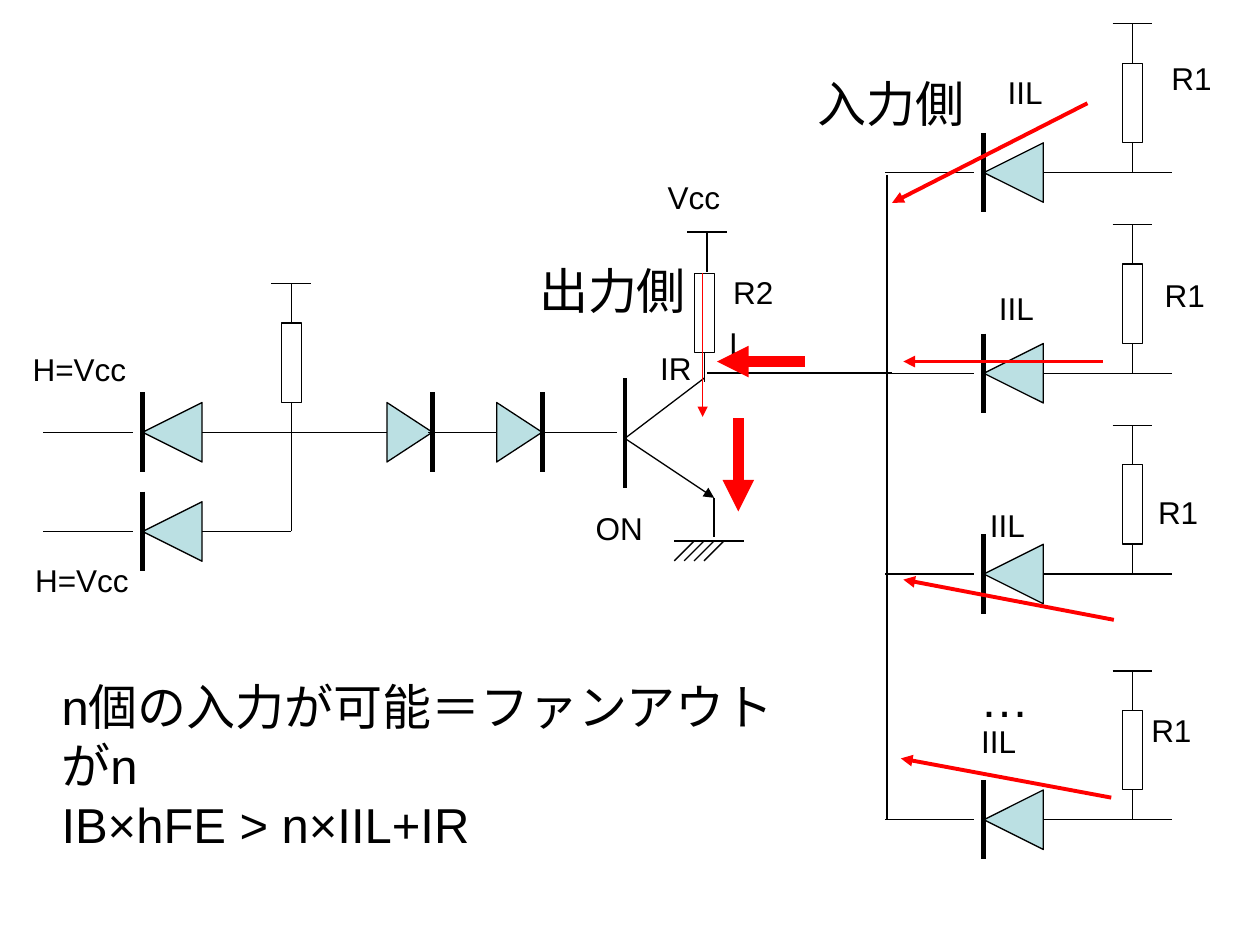
import lxml.etree
import pptx
import pptx.dml.color
import pptx.enum.shapes
import pptx.enum.text
import pptx.oxml.ns
import pptx.util

Pt = pptx.util.Pt
KIND = pptx.enum.shapes.MSO_SHAPE
BLACK, RED, AQUA = "000000", "FF0000", "BBE0E3"


def hue(code):
    return pptx.dml.color.RGBColor.from_string(code)


def put(item, vals):
    for name, val in vals.items():
        setattr(item, name, val)


def wire(pool, x1, y1, x2, y2, width=0.75, color=BLACK, arrow=False):
    line = pool.add_connector(pptx.enum.shapes.MSO_CONNECTOR.STRAIGHT,
                              Pt(x1), Pt(y1), Pt(x2), Pt(y2))
    line.line.color.rgb = hue(color)
    line.line.width = Pt(width)
    qn = pptx.oxml.ns.qn
    props = line._element.spPr
    if arrow:
        lxml.etree.SubElement(props.find(qn("a:ln")), qn("a:tailEnd"), type="triangle")
    lxml.etree.SubElement(props, qn("a:effectLst"))
    return line


def block(pool, kind, x, y, w, h, fill=None, turn=0):
    item = pool.add_shape(kind, Pt(x), Pt(y), Pt(w), Pt(h))
    item.shadow.inherit = False
    item.rotation = turn
    if fill:
        item.fill.solid()
        item.fill.fore_color.rgb = hue(fill)
    else:
        item.fill.background()
    item.line.color.rgb = hue(BLACK)
    item.line.width = Pt(0.75)
    return item


def label(pool, words, x, y, w, h=28.8, size=18, wrap=False):
    frame = pool.add_textbox(Pt(x), Pt(y), Pt(w), Pt(h)).text_frame
    put(frame, {"word_wrap": wrap, "text": words,
                "auto_size": pptx.enum.text.MSO_AUTO_SIZE.SHAPE_TO_FIT_TEXT})
    for para in frame.paragraphs:
        put(para.runs[0].font, {"name": "Arial", "size": Pt(size)})
        para.runs[0].font.color.rgb = hue(BLACK)


def resist(pool, x, y):
    """Resistor centred on x with its top at y."""
    return block(pool, KIND.RECTANGLE, x - 5.67, y, 11.34, 45.36)


def pullup(pool, x, y):
    """Supply bar and resistor ending at the junction (x, y)."""
    body = resist(pool, x, y - 62.4)
    wire(pool, x, y - 17, x, y).begin_connect(body, 2)
    wire(pool, x - 11.34, y - 85, x + 11.34, y - 85)
    wire(pool, x, y - 85, x, y - 62.4).end_connect(body, 0)
    wire(pool, x, y, x + 22.7, y)


def gate(pool, x, y):
    """Diode pointing left, its right lead ending at (x, y)."""
    part = pool.add_group_shape().shapes
    block(part, KIND.ISOSCELES_TRIANGLE, x - 85, y - 17, 34, 34, AQUA, 270)
    wire(part, x - 85, y - 22.7, x - 85, y + 22.7, 3)
    wire(part, x, y, x - 51, y)
    wire(part, x - 90.7, y, x - 141.7, y)


def series(pool, x, y):
    """Diode pointing right, with its bar at (x, y)."""
    part = pool.add_group_shape().shapes
    block(part, KIND.ISOSCELES_TRIANGLE, x - 30, y - 13, 34, 26, AQUA, 90)
    wire(part, x, y - 22.7, x, y + 22.7, 3)
    wire(part, x - 65, y, x - 26, y)
    wire(part, x + 4.3, y, x + 43, y)


def ground(pool, x, y):
    part = pool.add_group_shape().shapes
    wire(part, x, y, x + 39.7, y)
    for i in range(4):
        left = x + 5.67 * i
        wire(part, left + 11.34, y, left, y + 11.34)


def source(pool, x, y):
    """Two-input stage with its junction at (x, y)."""
    drop = 56.7
    gate(pool, x, y + drop)
    pullup(pool, x, y)
    wire(pool, x, y, x, y + drop)
    gate(pool, x, y)
    wire(pool, x + 16, y, x + 165, y)
    for step in (80.6, 143.3):
        series(pool, x + step, y)
    label(pool, "H=Vcc", x - 155, y - 50.4, 68.4)
    label(pool, "H=Vcc", x - 153.5, y + 69.8, 68.4)


def driver(pool, x, y):
    """Output transistor with its base at (x, y)."""
    wire(pool, x, y - 34.5, x, y + 28.2, 2.25)
    wire(pool, x + 45.4, y - 34.5, x, y)
    wire(pool, x, y, x + 51, y + 34, arrow=True)
    body = resist(pool, x + 45.4, y - 94.3)
    wire(pool, x + 45.4, y - 49, x + 45.4, y - 32.3).begin_connect(body, 2)
    wire(pool, x + 35.7, y - 118, x + 58.4, y - 118)
    wire(pool, x + 47, y - 118, x + 47, y - 95)
    wire(pool, x + 51, y + 34, x + 51, y + 56.5)
    ground(pool, x + 28.2, y + 58.7)
    wire(pool, x + 47, y - 37.4, x + 152.6, y - 37.4)
    for words, dx, dy, w in (("L", 52.6, -69, 24.5), ("ON", -23.8, 36.8, 41.8),
                             ("R2", 54.8, -98, 37.4), ("Vcc", 17.3, -152.4, 44.6),
                             ("IR", 13, -54.6, 32.4)):
        label(pool, words, x + dx, y + dy, w)


def loads(pool, x, rows):
    """Input stages on one bus, with a junction at x on each row."""
    for i, y in enumerate(rows):
        pullup(pool, x, y)
        gate(pool, x, y)
        label(pool, "R1", x + 15.1 - 3.84 * i, 30.2 + 124.1 * i, 37.4)
        label(pool, "IIL", x - 78.5 - 5.04 * i, 38.2 + 123.6 * i, 34.6)
    wire(pool, x - 140.4, rows[0] + 1.4, x - 140.4, rows[-1])


def flows(pool):
    """Red current arrows."""
    for x1, y1, x2, y2, width in (
            (621.4, 59, 509.8, 115.9, 2.25), (630, 206.6, 516.2, 206.6, 2.25),
            (636.5, 354.2, 516.2, 331.2, 2.25), (635, 455.8, 514.8, 433.4, 2.25),
            (460, 206.6, 409.7, 206.6, 6), (401.5, 156.2, 401.5, 238.3, 0.75),
            (421.9, 239, 421.9, 292.3, 6)):
        wire(pool, x1, y1, x2, y2, width, RED, True)


def notes(pool):
    label(pool, "入力側", 460, 38.2, 99.4, 41, 28)
    label(pool, "出力側", 301, 145.4, 99.4, 41, 28)
    label(pool, "…", 553, 378.7, 42.5, 41, 28)
    label(pool, "n個の入力が可能＝ファンアウトがn\nIB×hFE > n×IIL+IR",
          28.1, 383, 439.2, 74.9, 28, True)


def main():
    deck = pptx.Presentation()
    put(deck, {"slide_width": Pt(720), "slide_height": Pt(540)})
    pool = deck.slides.add_slide(deck.slide_layouts[6]).shapes
    source(pool, 166.5, 247)
    driver(pool, 357.1, 250.5)
    loads(pool, 647.2, (98.6, 213.3, 328, 468.4))
    flows(pool)
    notes(pool)
    deck.save("out.pptx")


if __name__ == "__main__":
    main()
